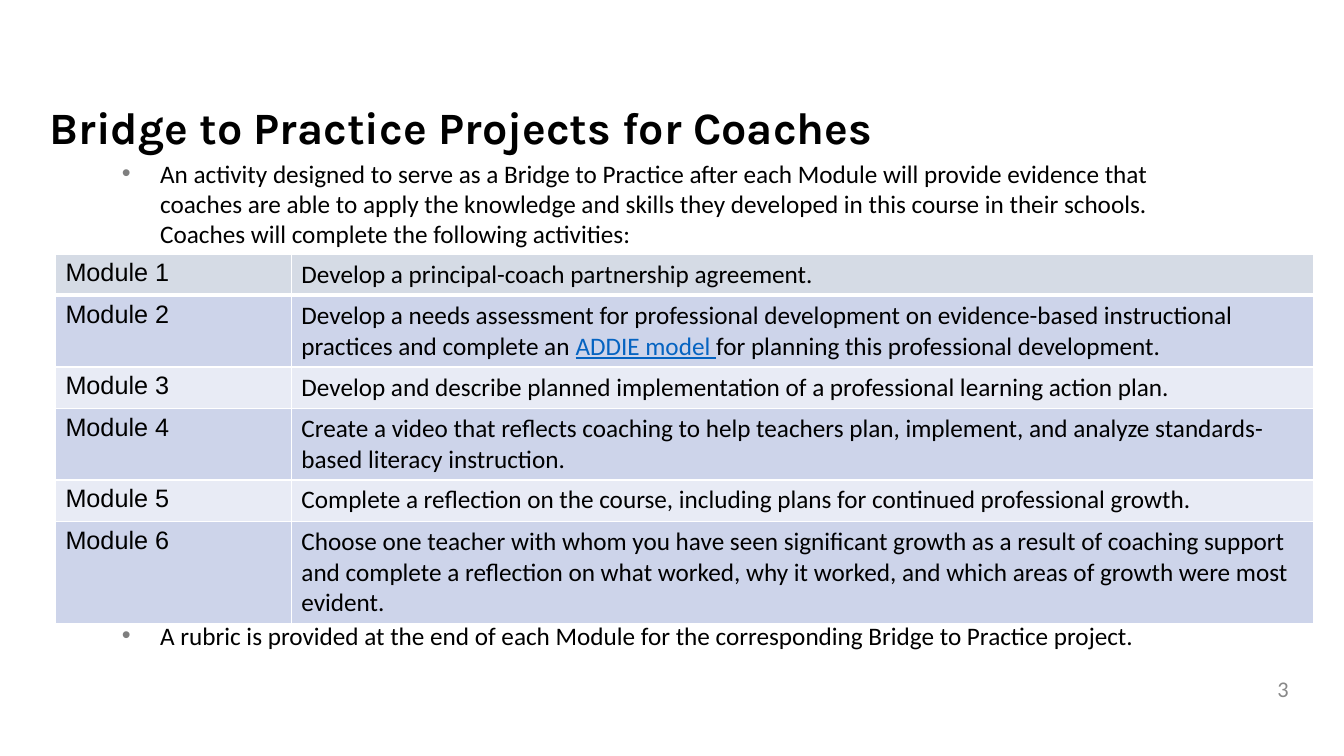
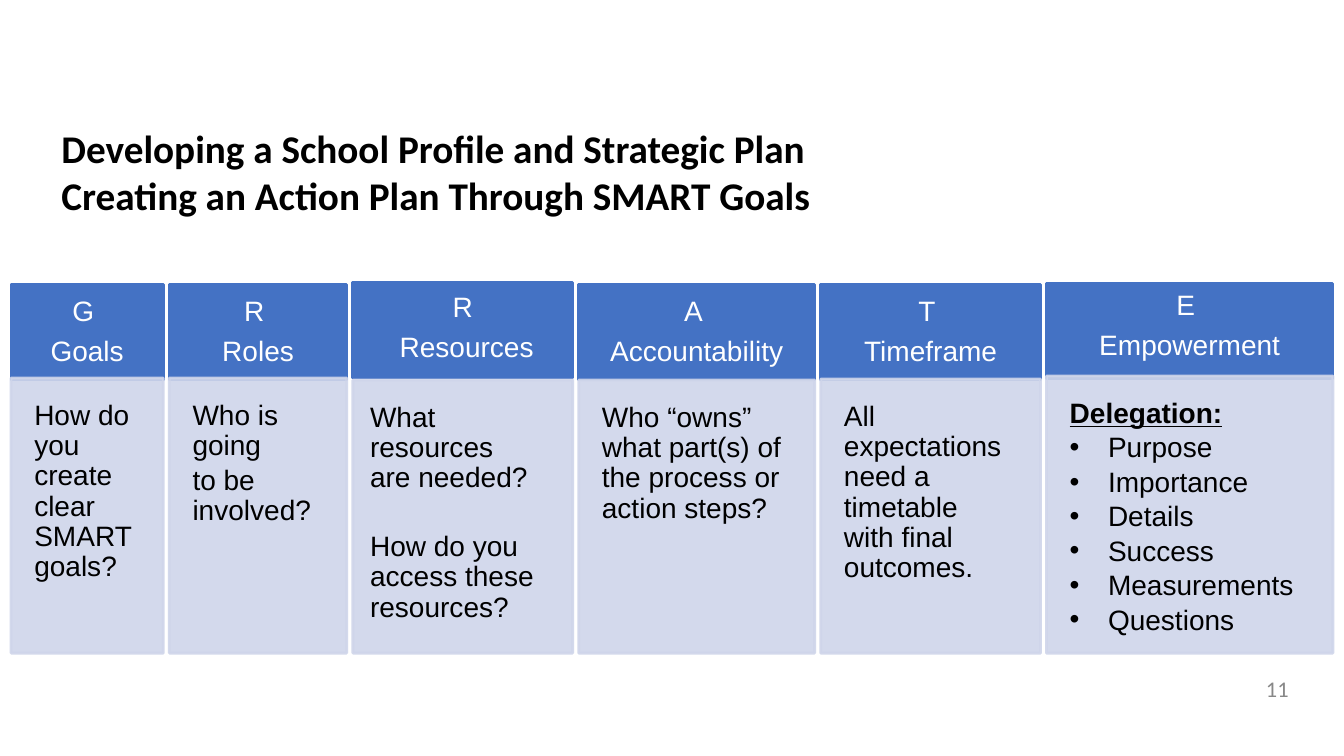
from pptx import Presentation
from pptx.dml.color import RGBColor
from pptx.enum.shapes import MSO_SHAPE
from pptx.enum.text import MSO_ANCHOR, MSO_AUTO_SIZE, PP_ALIGN
from pptx.oxml.ns import qn
from pptx.util import Emu, Pt
from lxml import etree

LEFT, CENTER, RIGHT = PP_ALIGN.LEFT, PP_ALIGN.CENTER, PP_ALIGN.RIGHT
TOP, MIDDLE = MSO_ANCHOR.TOP, MSO_ANCHOR.MIDDLE
RECTANGLE = MSO_SHAPE.RECTANGLE
NO_AUTOFIT = MSO_AUTO_SIZE.NONE

PX = 9144
TITLE_ONLY = 5
BLACK, WHITE, GREY, BULLET_GREY = "000000", "FFFFFF", "888888", "7F7F7F"
BLUE, PALE_BLUE, LINK_BLUE = "4472C4", "CFD5EA", "0563C1"
FIRST_ROW, DARK_ROW, LIGHT_ROW = "D5DBE5", "CDD4EA", "E8EBF5"
INSETS = (10, 5, 10, 5)
BULLET_INDENT = 38

COACH_TITLE = "Bridge to Practice Projects for Coaches"
COACH_BULLETS = [
    (152, 100, "An activity designed to serve as a Bridge to Practice after each Module "
               "will provide evidence that coaches are able to apply the knowledge and "
               "skills they developed in this course in their schools. Coaches will "
               "complete the following activities:"),
    (610, 41, "A rubric is provided at the end of each Module for the corresponding "
              "Bridge to Practice project."),
]
TABLE_LEFT, TABLE_TOP = 55, 252
COLUMN_WIDTHS = [234, 1014]
LINK_TEXT = "ADDIE model "
MODULES = [
    (41, ["Develop a principal-coach partnership agreement."]),
    (71, ["Develop a needs assessment for professional development on evidence-based "
          "instructional practices and complete an ", LINK_TEXT,
          "for planning this professional development."]),
    (41, ["Develop and describe planned implementation of a professional learning "
          "action plan."]),
    (71, ["Create a video that reflects coaching to help teachers plan, implement, and "
          "analyze standards-based literacy instruction."]),
    (41, ["Complete a reflection on the course, including plans for continued "
          "professional growth."]),
    (101, ["Choose one teacher with whom you have seen significant growth as a result of "
           "coaching support and complete a reflection on what worked, why it worked, and "
           "which areas of growth were most evident."]),
]

PLAN_TITLE = ("Developing a School Profile and Strategic Plan "
              "Creating an Action Plan Through SMART Goals")
PLAN_LEFT, PLAN_GAP, PLAN_BOTTOM, HEAD_HEIGHT = 11, 6, 648, 95
PLAN_COLUMNS = [
    dict(width=151, head_top=282, body_top=375, head=["G ", "Goals"],
         body=["How do you create clear SMART goals?"]),
    dict(width=176, head_top=282, body_top=375, head=["R ", "Roles"],
         body=["Who is going", "to be involved?"]),
    dict(width=218, head_top=280, body_top=377, head=["R", " Resources"], lift=3, shift=6,
         body=["What resources are needed?", "How do you access these resources?"],
         gap_before_last=24.5),
    dict(width=234, head_top=282, body_top=377, head=["A ", "Accountability"],
         body=["Who “owns” what part(s) of the process or action steps?"]),
    dict(width=218, head_top=282, body_top=376, head=["T ", "Timeframe"],
         body=["All expectations need a timetable with final outcomes."]),
    dict(width=284, head_top=281, body_top=373, head=["E ", "Empowerment"], lift=9,
         body=["Delegation:"],
         bullets=["Purpose", "Importance", "Details", "Success", "Measurements",
                  "Questions"]),
]


def px(length):
    return Emu(round(length * PX))


def rgb(color):
    return RGBColor.from_string(color)


def style(target, size, face, color, bold=False, underline=False):
    font = target.font
    font.size, font.name, font.bold, font.underline = Pt(size), face, bold, underline
    font.color.rgb = rgb(color)


def set_frame(frame, insets=INSETS, anchor=TOP):
    frame.word_wrap = True
    frame.auto_size = NO_AUTOFIT
    frame.vertical_anchor = anchor
    (frame.margin_left, frame.margin_top,
     frame.margin_right, frame.margin_bottom) = map(px, insets)


def write(frame, lines, size, face, color, align=LEFT, bold=False):
    frame.text = "\n".join(lines)
    for para in frame.paragraphs:
        para.alignment = align
        for span in para.runs:
            style(span, size, face, color, bold)


def add_bullet(para, color):
    properties = para._p.get_or_add_pPr()
    properties.set("marL", str(px(BULLET_INDENT)))
    properties.set("indent", str(-px(BULLET_INDENT)))
    paint = etree.SubElement(properties, qn("a:buClr"))
    etree.SubElement(paint, qn("a:srgbClr"), val=color)
    etree.SubElement(properties, qn("a:buFont"), typeface="Arial")
    etree.SubElement(properties, qn("a:buChar"), char="•")


def add_text(page, left, top, width, height, text, size, color, align=LEFT, anchor=TOP):
    box = page.shapes.add_textbox(px(left), px(top), px(width), px(height))
    set_frame(box.text_frame, anchor=anchor)
    write(box.text_frame, [text], size, "Calibri", color, align)
    return box


def add_page(deck, number, title, place, size, face, anchor):
    page = deck.slides.add_slide(deck.slide_layouts[TITLE_ONLY])
    box = page.shapes.title
    box.left, box.top, box.width, box.height = map(px, place)
    set_frame(box.text_frame, anchor=anchor)
    write(box.text_frame, [title], size, face, BLACK, bold=True)
    add_text(page, 1055, 668, 233, 30, number, 16, GREY, RIGHT, MIDDLE)
    return page


def add_block(page, left, top, width, height, color, opacity=100):
    block = page.shapes.add_shape(RECTANGLE, px(left), px(top), px(width), px(height))
    block.shadow.inherit = False
    block.fill.solid()
    block.fill.fore_color.rgb = rgb(color)
    block.line.color.rgb = rgb(color)
    block.line.width = Pt(2)
    if opacity < 100:
        for paint in block._element.spPr.iter(qn("a:srgbClr")):
            etree.SubElement(paint, qn("a:alpha"), val=str(opacity * 1000))
    return block


def set_borders(cell, widths):
    properties = cell._tc.get_or_add_tcPr()
    for side, width in zip("LRTB", widths):
        line = etree.SubElement(properties, qn(f"a:ln{side}"), w=str(Pt(width)))
        fill = etree.SubElement(line, qn("a:solidFill"))
        etree.SubElement(fill, qn("a:srgbClr"), val=WHITE)


def fill_cell(cell, spans, face, color, borders):
    set_borders(cell, borders)
    cell.fill.solid()
    cell.fill.fore_color.rgb = rgb(color)
    para = cell.text_frame.paragraphs[0]
    for text in spans:
        span = para.add_run()
        span.text = text
        linked = text == LINK_TEXT
        style(span, 18, face, LINK_BLUE if linked else BLACK, underline=linked)


def add_module_table(page):
    height = sum(row_height for row_height, _ in MODULES)
    table = page.shapes.add_table(
        len(MODULES), len(COLUMN_WIDTHS), px(TABLE_LEFT), px(TABLE_TOP),
        px(sum(COLUMN_WIDTHS)), px(height)).table
    table.first_row = table.horz_banding = False
    for column, width in zip(table.columns, COLUMN_WIDTHS):
        column.width = px(width)
    for index, (row_height, spans) in enumerate(MODULES):
        table.rows[index].height = px(row_height)
        color = FIRST_ROW if index == 0 else (LIGHT_ROW, DARK_ROW)[index % 2]
        top = 3 if index == 1 else 1
        bottom = 3 if index == 0 else 1
        borders = (1, 1, top, bottom)
        fill_cell(table.cell(index, 0), [f"Module {index + 1}"], "Arial", color, borders)
        fill_cell(table.cell(index, 1), spans, "Calibri", color, borders)


def space_lines(frame, after):
    for para in frame.paragraphs:
        para.line_spacing = 0.9
        para.space_after = Pt(after)


def add_plan_column(page, left, column):
    width, body_top = column["width"], column["body_top"]
    head = add_block(page, left, column["head_top"], width, HEAD_HEIGHT, BLUE).text_frame
    set_frame(head, (10, 5, 10, 5 + column.get("lift", 0)), MIDDLE)
    write(head, column["head"], 20, "Arial", WHITE, CENTER)
    space_lines(head, 7)

    shift, bullets = column.get("shift", 0), column.get("bullets", [])
    body = add_block(page, left, body_top, width, PLAN_BOTTOM - body_top,
                     PALE_BLUE, 90).text_frame
    set_frame(body, (23 - shift, 23, 31 + shift, 5))
    write(body, column["body"] + bullets, 20, "Arial", BLACK)
    space_lines(body, 3)
    if "gap_before_last" in column:
        body.paragraphs[-1].space_before = Pt(column["gap_before_last"])
    if bullets:
        style(body.paragraphs[0].runs[0], 20, "Arial", BLACK, bold=True, underline=True)
        for para in body.paragraphs[1:]:
            add_bullet(para, BLACK)


def build_coach_page(deck):
    page = add_page(deck, "3", COACH_TITLE, (39, 79, 907, 94), 32, "Karla", MIDDLE)
    for top, height, text in COACH_BULLETS:
        box = add_text(page, 111, top, 1065, height, text, 18, BLACK)
        add_bullet(box.text_frame.paragraphs[0], BULLET_GREY)
    add_module_table(page)


def build_plan_page(deck):
    page = add_page(deck, "11", PLAN_TITLE, (51, 118, 819, 104), 28, "Calibri", TOP)
    left = PLAN_LEFT
    for column in PLAN_COLUMNS:
        add_plan_column(page, left, column)
        left += column["width"] + PLAN_GAP


def main():
    deck = Presentation()
    deck.slide_width, deck.slide_height = px(1333), px(750)
    build_coach_page(deck)
    build_plan_page(deck)
    deck.save("out.pptx")


if __name__ == "__main__":
    main()
